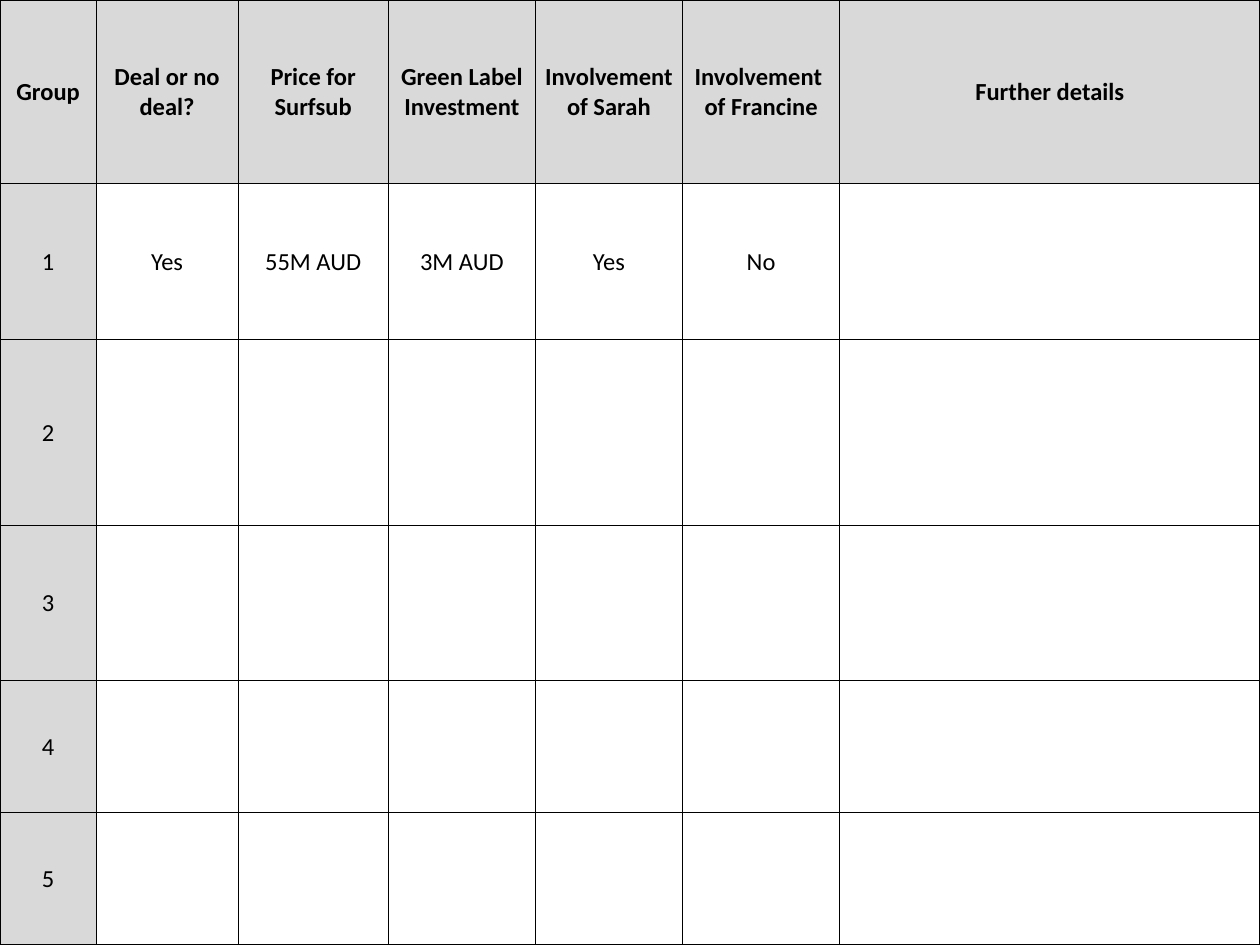
from lxml import etree
from pptx import Presentation
from pptx.dml.color import RGBColor
from pptx.enum.text import MSO_ANCHOR, PP_ALIGN
from pptx.oxml.ns import qn
from pptx.util import Pt

MIDDLE = MSO_ANCHOR.MIDDLE
CENTER = PP_ALIGN.CENTER
BLANK_LAYOUT = 6

WIDTH, HEIGHT = 720, 540
COLUMN_WIDTHS = [55, 81, 86, 84, 84, 90, 240]
ROW_HEIGHTS = [105, 89, 106, 89, 75.5, 75.5]
HEADINGS = ["Group", "Deal or no deal?", "Price for Surfsub", "Green Label Investment",
            "Involvement of Sarah", "Involvement \nof Francine", "Further details"]
RESULTS = {1: ["Yes", "55M AUD", "3M AUD", "Yes", "No"]}


def color(value):
    return RGBColor.from_string(value)


class SlideBuilder:
    font_format = {"name": "Calibri", "size": Pt(14)}
    cell_format = {"vertical_anchor": MIDDLE, "margin_left": Pt(0.7), "margin_right": Pt(0.7),
                   "margin_top": Pt(0.7), "margin_bottom": Pt(0)}
    ink = "000000"
    header_fill = "D9D9D9"
    border_width = 0.5

    def __init__(self, slide):
        self.slide = slide

    def apply(self, target, values):
        for name, value in values.items():
            setattr(target, name, value)

    def borders(self, cell):
        properties = cell._tc.get_or_add_tcPr()
        for side in ("lnL", "lnR", "lnT", "lnB"):
            line = etree.SubElement(properties, qn(f"a:{side}"), w=str(Pt(self.border_width)))
            fill = etree.SubElement(line, qn("a:solidFill"))
            etree.SubElement(fill, qn("a:srgbClr"), val=self.ink)

    def cell(self, cell, text, shaded, bold):
        self.apply(cell, self.cell_format)
        # Borders come before the fill in the cell properties
        self.borders(cell)
        if shaded:
            cell.fill.solid()
            cell.fill.fore_color.rgb = color(self.header_fill)
        else:
            cell.fill.background()
        cell.text = text
        for para in cell.text_frame.paragraphs:
            para.alignment = CENTER
            self.apply(para.font, self.font_format)
            for span in para.runs:
                self.apply(span.font, {**self.font_format, "bold": bold})
                span.font.color.rgb = color(self.ink)

    def table(self, left, top, widths, heights, rows):
        frame = self.slide.shapes.add_table(len(heights), len(widths), Pt(left), Pt(top),
                                            Pt(sum(widths)), Pt(sum(heights)))
        table = frame.table
        self.apply(table, {"first_row": False, "horz_banding": False})
        for column, width in zip(table.columns, widths):
            column.width = Pt(width)
        for row, height in zip(table.rows, heights):
            row.height = Pt(height)
        for r, texts in enumerate(rows):
            for c, text in enumerate(texts):
                self.cell(table.cell(r, c), text, shaded=r == 0 or c == 0, bold=r == 0)


def main():
    deck = Presentation()
    deck.slide_width, deck.slide_height = Pt(WIDTH), Pt(HEIGHT)
    page = SlideBuilder(deck.slides.add_slide(deck.slide_layouts[BLANK_LAYOUT]))

    # One row per group, padded with empty cells
    rows = [HEADINGS]
    for group in range(1, len(ROW_HEIGHTS)):
        texts = [str(group)] + RESULTS.get(group, [])
        rows.append(texts + [""] * (len(HEADINGS) - len(texts)))

    # Results table fills the slide
    page.table(0, 0, COLUMN_WIDTHS, ROW_HEIGHTS, rows)
    deck.save("out.pptx")


if __name__ == "__main__":
    main()
